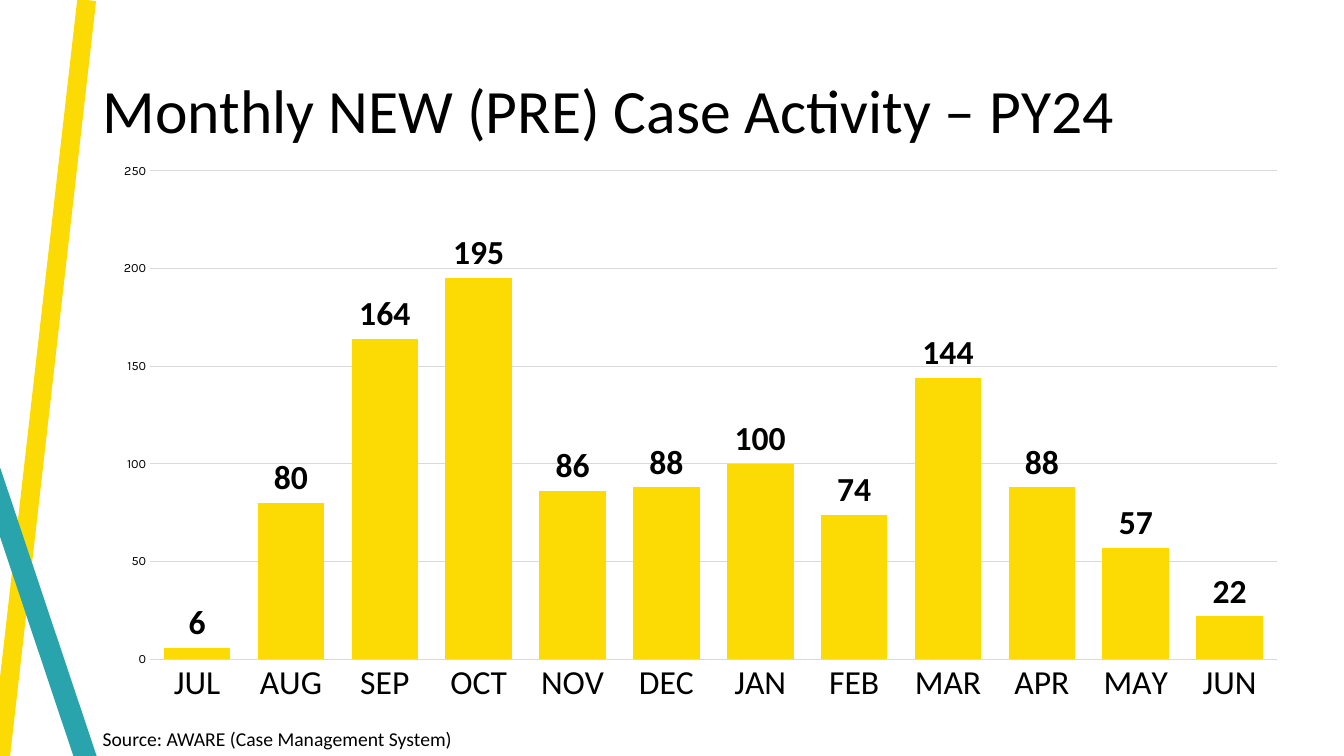
from lxml import etree
from pptx import Presentation
from pptx.chart.data import CategoryChartData
from pptx.dml.color import RGBColor
from pptx.enum.chart import XL_CHART_TYPE, XL_LABEL_POSITION, XL_TICK_MARK
from pptx.enum.shapes import MSO_CONNECTOR
from pptx.enum.text import MSO_ANCHOR, MSO_AUTO_SIZE, PP_ALIGN
from pptx.oxml.ns import qn
from pptx.util import Inches, Pt

YELLOW, TEAL, BLACK, GREY, WHITE = "FCDB05", "2AA4AC", "000000", "D9D9D9", "FFFFFF"
CASES = {"JUL": 6, "AUG": 80, "SEP": 164, "OCT": 195, "NOV": 86, "DEC": 88,
         "JAN": 100, "FEB": 74, "MAR": 144, "APR": 88, "MAY": 57, "JUN": 22}


def color(value):
    """Turn a hex string into a colour."""
    return RGBColor.from_string(value)


def style_font(font, size, name="Calibri", bold=False):
    """Set a font to black in the given size and face."""
    font.name = name
    font.size = Pt(size)
    font.bold = bold
    font.color.rgb = color(BLACK)


def style_line(line, hex_color, width):
    """Give a line its colour and its width in points."""
    line.color.rgb = color(hex_color)
    line.width = Pt(width)


def add_stripe(page, start, end, hex_color, width):
    """Draw one thick decorative line between two points."""
    stripe = page.shapes.add_connector(
        MSO_CONNECTOR.STRAIGHT, *(Inches(value) for value in start + end))
    style_line(stripe.line, hex_color, width)
    etree.SubElement(stripe._element.spPr, qn("a:effectLst"))


def fill_title(page, left, top, width, height, text):
    """Place the title placeholder in its box and format it."""
    title = page.shapes.title
    title.left, title.top = Inches(left), Inches(top)
    title.width, title.height = Inches(width), Inches(height)
    frame = title.text_frame
    frame.text = text
    frame.auto_size = MSO_AUTO_SIZE.NONE
    frame.vertical_anchor = MSO_ANCHOR.MIDDLE
    para = frame.paragraphs[0]
    para.alignment = PP_ALIGN.LEFT
    para.line_spacing = 0.9
    style_font(para.runs[0].font, 44)


def add_source(page, left, top, width, height, text):
    """Add the source line below the chart."""
    box = page.shapes.add_textbox(Inches(left), Inches(top), Inches(width), Inches(height))
    frame = box.text_frame
    frame.text = text
    frame.word_wrap = False
    frame.auto_size = MSO_AUTO_SIZE.SHAPE_TO_FIT_TEXT
    style_font(frame.paragraphs[0].runs[0].font, 14)


def add_case_chart(page, left, top, width, height):
    """Add the column chart of new cases by month."""
    data = CategoryChartData()
    data.categories = list(CASES)
    data.add_series("Series 1", list(CASES.values()))
    chart = page.shapes.add_chart(
        XL_CHART_TYPE.COLUMN_CLUSTERED, Inches(left), Inches(top),
        Inches(width), Inches(height), data).chart
    chart.has_title = False
    chart.has_legend = False
    style_font(chart.font, 10, "Karla")

    months = chart.category_axis
    months.major_tick_mark = XL_TICK_MARK.NONE
    style_line(months.format.line, GREY, 0.75)
    style_font(months.tick_labels.font, 24)

    scale = chart.value_axis
    scale.minimum_scale, scale.maximum_scale, scale.major_unit = 0, 250, 50
    scale.major_tick_mark = XL_TICK_MARK.NONE
    scale.format.line.fill.background()
    style_line(scale.major_gridlines.format.line, GREY, 0.75)
    style_font(scale.tick_labels.font, 9, "Karla")

    plot = chart.plots[0]
    plot.gap_width = 41
    plot.overlap = -27
    plot.vary_by_categories = False
    columns = plot.series[0]
    columns.format.fill.solid()
    columns.format.fill.fore_color.rgb = color(YELLOW)
    labels = columns.data_labels
    labels.show_value = True
    labels.position = XL_LABEL_POSITION.OUTSIDE_END
    style_font(labels.font, 24, bold=True)


def build_case_slide(deck):
    """Build the slide on monthly new cases."""
    page = deck.slides.add_slide(deck.slide_layouts[5])
    page.background.fill.solid()
    page.background.fill.fore_color.rgb = color(WHITE)
    add_stripe(page, (0.86, 0), (0, 7.55), YELLOW, 13.5)
    add_stripe(page, (-0.1, 4.68), (0.86, 7.55), TEAL, 15.75)
    fill_title(page, 0.92, 0.4, 11.5, 1.45, "Monthly NEW (PRE) Case Activity – PY24")
    add_source(page, 0.92, 7.16, 3.74, 0.34, "Source: AWARE (Case Management System)")
    add_case_chart(page, 0.99, 1.51, 11.91, 5.59)


def main():
    """Create the deck and save it."""
    deck = Presentation()
    deck.slide_width, deck.slide_height = Inches(13.33), Inches(7.5)
    build_case_slide(deck)
    deck.save("out.pptx")


if __name__ == "__main__":
    main()
